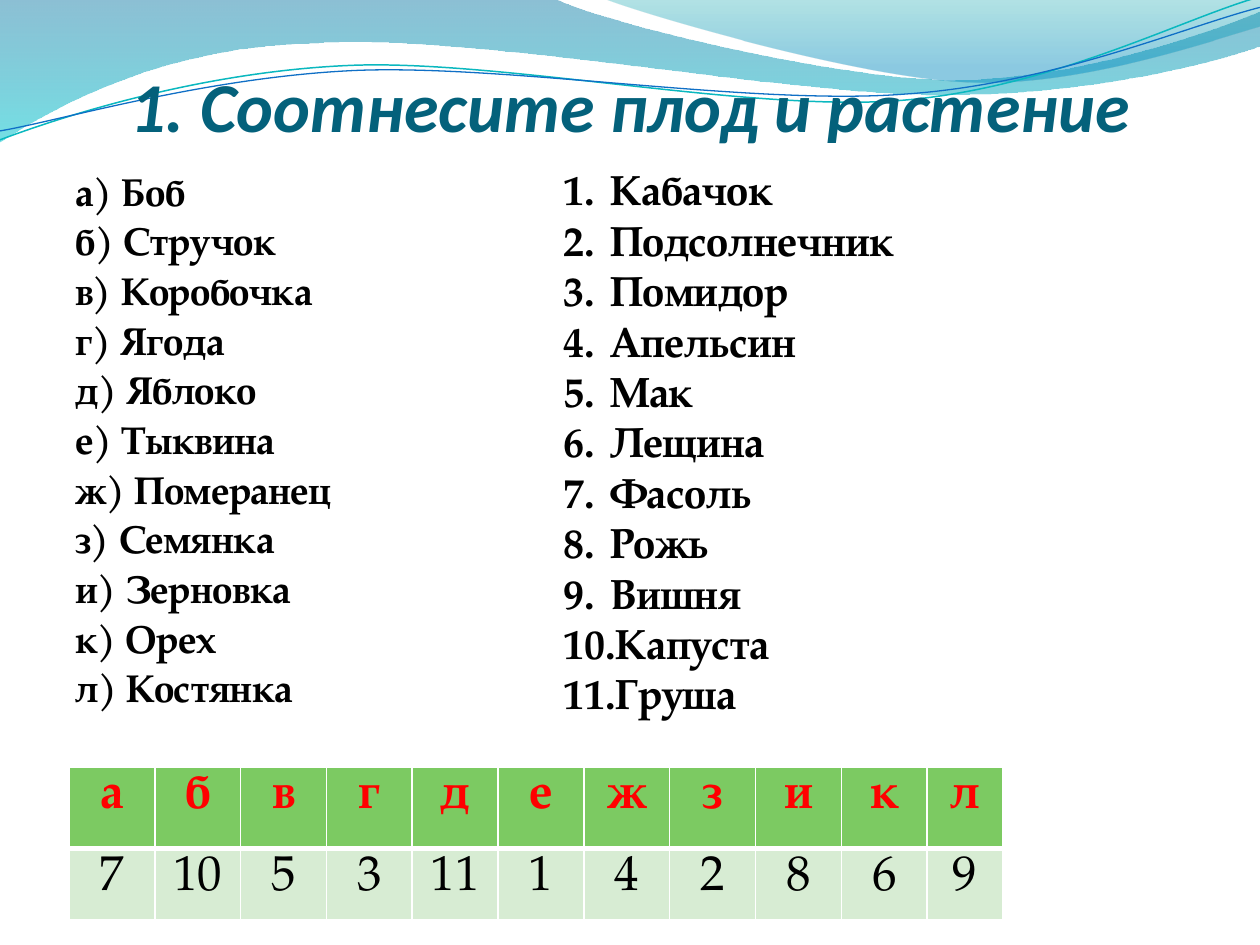
from lxml.etree import SubElement
from pptx import Presentation
from pptx.dml.color import RGBColor
from pptx.enum.text import MSO_ANCHOR, MSO_AUTO_SIZE, PP_ALIGN
from pptx.oxml.ns import qn
from pptx.util import Cm, Pt

SERIF = "TeX Gyre Pagella"
FRUITS = ["Боб", "Стручок", "Коробочка", "Ягода", "Яблоко", "Тыквина",
          "Померанец", "Семянка", "Зерновка", "Орех", "Костянка"]
PLANTS = ["Кабачок", "Подсолнечник", "Помидор", "Апельсин", "Мак", "Лещина",
          "Фасоль", "Рожь", "Вишня", "Капуста", "Груша"]
MARKS = "абвгдежзикл"
KEYS = [7, 10, 5, 3, 11, 1, 4, 2, 8, 6, 9]

BAND = [[(0, 0)], [(11.18, -0.03)],
        [(12.09, 0.43), (16.87, 1.6), (19.25, 1.6)],
        [(21.67, 1.6), (24.33, 0.66), (25.4, 0.23)], [(25.43, 0.91)],
        [(24.97, 1.12), (22.1, 1.93), (18.95, 1.91)],
        [(15.8, 1.91), (9.7, 0.71), (6.53, 0.86)],
        [(3.28, 0.91), (1.17, 2.11), (-0.03, 2.87)]]
CREST = [[(12.17, -0.03)],
         [(12.93, 0.28), (17.32, 1.57), (19.53, 1.65)],
         [(21.74, 1.75), (24.41, 0.81), (25.4, 0.53)], [(25.4, 0)]]
TEAL = [[(0, 2.82)],
        [(1.22, 2.36), (4.01, 1.45), (7.04, 1.32)],
        [(10.03, 1.19), (15.06, 2.26), (18.11, 2.03)],
        [(21.16, 1.8), (23.83, 0.38), (25.35, -0.05)]]
BLUE = [[(0, 2.64)],
        [(1.19, 2.44), (4.17, 1.55), (7.19, 1.42)],
        [(10.24, 1.3), (15.16, 2.13), (18.21, 1.9)],
        [(21.23, 1.7), (23.9, 0.53), (25.4, 0.15)]]


def paint(code):
    return RGBColor.from_string(code)


def add_curve(slide, steps, close):
    ends = [(Cm(x), Cm(y)) for x, y in (step[-1] for step in steps)]
    pen = slide.shapes.build_freeform(*ends[0])
    pen.add_line_segments(ends[1:], close=close)
    shape = pen.convert_to_shape()
    shape.shadow.inherit = False
    parts = shape._element.xpath(".//a:path/a:lnTo")
    for part, step in zip(parts, steps[1:]):
        if len(step) == 3:
            part.tag = qn("a:cubicBezTo")
            end = part[0]
            for x, y in step[:2]:
                knot = SubElement(part, qn("a:pt"), x=str(Cm(x) - shape.left),
                                  y=str(Cm(y) - shape.top))
                end.addprevious(knot)
    return shape


def add_wave(slide, steps, stops):
    shape = add_curve(slide, steps, True)
    shape.line.fill.background()
    shape.fill.gradient()
    shape.fill.gradient_angle = 270
    for stop, (place, code, _) in zip(shape.fill.gradient_stops, stops):
        stop.position = place
        stop.color.rgb = paint(code)
    tints = shape._element.xpath(".//a:gs/a:srgbClr")
    for tint, (_, _, alpha) in zip(tints, stops):
        SubElement(tint, qn("a:alpha"), val=str(alpha * 1000))


def add_line(slide, steps, code, width):
    shape = add_curve(slide, steps, False)
    shape.fill.background()
    shape.line.color.rgb = paint(code)
    shape.line.width = Pt(width)


def add_run(para, text, size, code="000000", bold=True, face=SERIF):
    run = para.add_run()
    run.text = text
    font = run.font
    font.name, font.size, font.bold = face, Pt(size), bold
    font.color.rgb = paint(code)
    return run


def set_title(slide, text):
    title = slide.shapes.title
    slide.shapes._spTree.append(title._element)
    title.left, title.top, title.width, title.height = Cm(1.27), Cm(1.96), Cm(22.86), Cm(3)
    frame = title.text_frame
    frame.auto_size = MSO_AUTO_SIZE.NONE
    frame.vertical_anchor = MSO_ANCHOR.BOTTOM
    frame.margin_left = frame.margin_right = 0
    frame.margin_top, frame.margin_bottom = Cm(0.13), Cm(2.01)
    para = frame.paragraphs[0]
    para.alignment = PP_ALIGN.CENTER
    add_run(para, text, 40, "04617B", face="Calibri").font.italic = True


def add_list(slide, box, items, size, indent, count=False, space=None, lead=None):
    frame = slide.shapes.add_textbox(*map(Cm, box)).text_frame
    frame.word_wrap = True
    for i, item in enumerate(items):
        para = frame.paragraphs[0] if i == 0 else frame.add_paragraph()
        props = para._p.get_or_add_pPr()
        props.set("marL", str(Cm(indent)))
        props.set("indent", str(-Cm(indent)))
        if count:
            SubElement(props, qn("a:buFont"), typeface="+mj-lt")
            SubElement(props, qn("a:buAutoNum"), type="arabicPeriod")
        if lead:
            para.line_spacing = lead
        if space and i:
            para.space_before = Pt(space)
        add_run(para, item, size)


def add_edge(cell, side, width):
    edge = SubElement(cell._tc.get_or_add_tcPr(), qn("a:ln" + side), w=str(Pt(width)))
    fill = SubElement(edge, qn("a:solidFill"))
    SubElement(fill, qn("a:srgbClr"), val="FFFFFF")


def add_grid(slide, rows):
    cols = len(rows[0])
    table = slide.shapes.add_table(2, cols, Cm(1.39), Cm(15.47), Cm(18.83), Cm(3)).table
    table.horz_banding = False
    for i, col in enumerate(table.columns):
        col.width = Cm(1.73 if i < cols - 1 else 1.53)
    looks = [(1.63, "7CCA62", "FF0000", True, 1, 3),
             (1.37, "D7ECD3", "000000", False, 3, 1)]
    for row, texts, look in zip(table.rows, rows, looks):
        tall, back, ink, bold, top, base = look
        row.height = Cm(tall)
        for cell, text in zip(row.cells, texts):
            for side, width in zip("LRTB", (1, 1, top, base)):
                add_edge(cell, side, width)
            cell.fill.solid()
            cell.fill.fore_color.rgb = paint(back)
            para = cell.text_frame.paragraphs[0]
            para.alignment = PP_ALIGN.CENTER
            add_run(para, str(text), 28, ink, bold)


def main():
    deck = Presentation()
    deck.slide_width, deck.slide_height = Cm(25.4), Cm(19.05)
    slide = deck.slides.add_slide(deck.slide_layouts[5])
    add_wave(slide, BAND, [(0, "0074A1", 45), (1, "00C6CF", 55)])
    add_wave(slide, CREST, [(0, "00A1A9", 30), (0.8, "008BBF", 45)])
    add_line(slide, TEAL, "0AB8BF", 0.85)
    add_line(slide, BLUE, "0F6FC6", 0.75)
    set_title(slide, "1. Соотнесите плод и растение")
    fruits = [f"{mark}) {name}" for mark, name in zip(MARKS, FRUITS)]
    add_list(slide, (1.27, 3.36, 9.04, 12.29), fruits, 22.1, 0.76, space=4.5, lead=0.9)
    add_list(slide, (11.11, 3.18, 12.12, 11.53), PLANTS, 24, 0.95, count=True)
    add_grid(slide, [MARKS, KEYS])
    deck.save("out.pptx")


if __name__ == "__main__":
    main()
